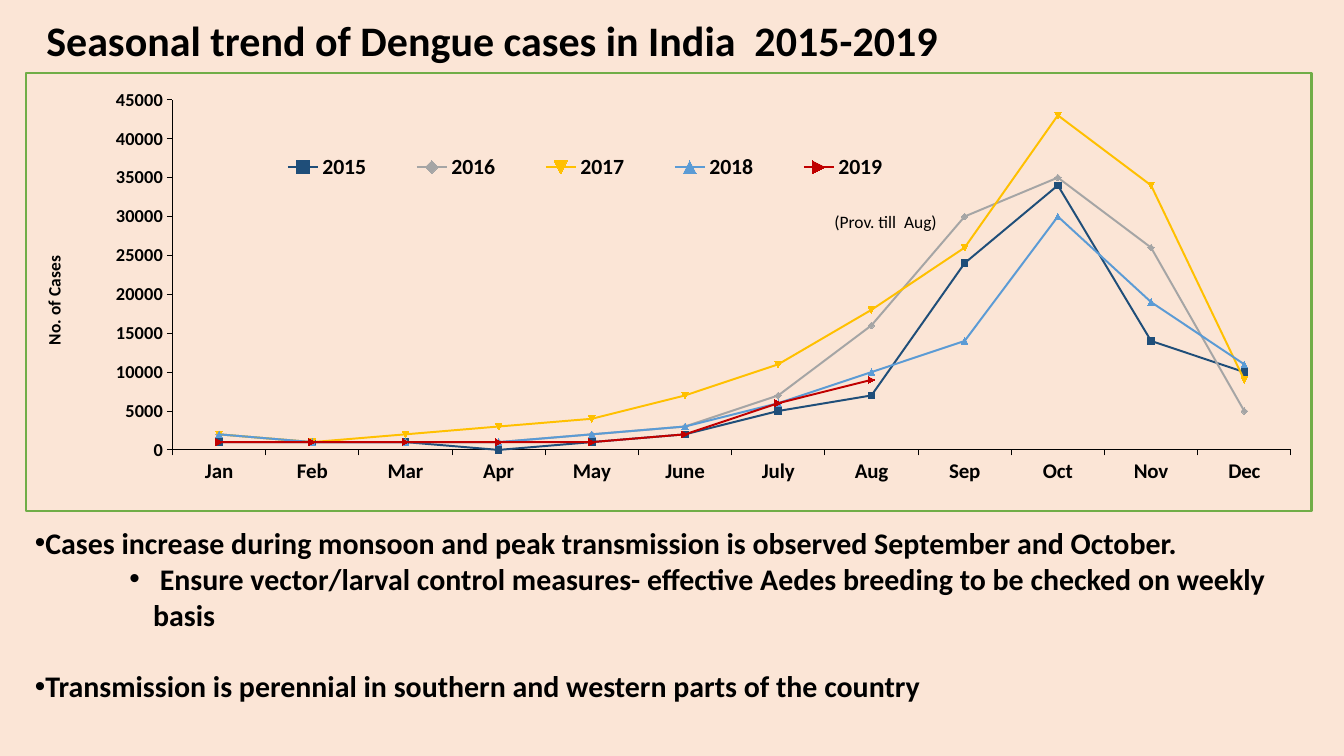
import dataclasses

import lxml.etree
import pptx
import pptx.chart.data
import pptx.dml.color
import pptx.enum.chart
import pptx.enum.text
import pptx.oxml
import pptx.oxml.ns
import pptx.util

qn = pptx.oxml.ns.qn
WIDTH, HEIGHT = 14.22, 8


@dataclasses.dataclass(frozen=True)
class Theme:
    font: str = "Calibri"
    ground: str = "FBE5D6"
    ink: str = "000000"
    border: str = "70AD47"
    title: float = 32
    body: float = 22.8
    note: float = 13.3
    axis_title: float = 13.3
    value_axis: float = 14
    month_axis: float = 16
    legend: float = 16.6


THEME = Theme()

MONTHS = ["Jan", "Feb", "Mar", "Apr", "May", "June",
          "July", "Aug", "Sep", "Oct", "Nov", "Dec"]
# Year: line colour, then cases in thousands by month
YEARS = {
    "2015": ("1F4E79", [1, 1, 1, 0, 1, 2, 5, 7, 24, 34, 14, 10]),
    "2016": ("A5A5A5", [2, 1, 1, 1, 2, 3, 7, 16, 30, 35, 26, 5]),
    "2017": ("FFC000", [2, 1, 2, 3, 4, 7, 11, 18, 26, 43, 34, 9]),
    "2018": ("5B9BD5", [2, 1, 1, 1, 2, 3, 6, 10, 14, 30, 19, 11]),
    "2019": ("C00000", [1, 1, 1, 1, 1, 2, 6, 9] + [None] * 4),
}
# Text, left margin and hanging indent in inches, space after in lines
POINTS = [
    ("Cases increase during monsoon and peak transmission is observed "
     "September and October.", 0, 0, 0),
    (" Ensure vector/larval control measures- effective Aedes breeding "
     "to be checked on weekly basis", 1.25, -0.25, 1.2),
    ("Transmission is perennial in southern and western parts of the country",
     0, 0, 0),
]


def color(code):
    return pptx.dml.color.RGBColor.from_string(code)


def style(font, size, bold=True):
    font.name, font.size, font.bold = THEME.font, pptx.util.Pt(size), bold
    font.color.rgb = color(THEME.ink)


def inches(box):
    return [pptx.util.Inches(length) for length in box]


def place(shape, box):
    shape.left, shape.top, shape.width, shape.height = inches(box)


def add_title(page, box):
    title = page.shapes.title
    place(title, box)
    frame = title.text_frame
    frame.text = "Seasonal trend of Dengue cases in India  2015-2019"
    frame.auto_size = pptx.enum.text.MSO_AUTO_SIZE.NONE
    frame.vertical_anchor = pptx.enum.text.MSO_ANCHOR.MIDDLE
    para = frame.paragraphs[0]
    para.alignment = pptx.enum.text.PP_ALIGN.LEFT
    para.line_spacing = 0.9
    style(para.font, THEME.title)


def add_points(page, box):
    body = page.placeholders[1]
    place(body, box)
    frame = body.text_frame
    frame.auto_size = pptx.enum.text.MSO_AUTO_SIZE.NONE
    frame.margin_left = frame.margin_right = pptx.util.Inches(0.11)
    frame.margin_top = frame.margin_bottom = pptx.util.Inches(0.06)
    frame.text = "\n".join(point[0] for point in POINTS)
    for para, (_, margin, indent, gap) in zip(frame.paragraphs, POINTS):
        para.level = 1 if margin else 0
        para.space_before = pptx.util.Pt(0)
        para.space_after = pptx.util.Pt(gap * THEME.body)
        style(para.font, THEME.body)
        # Bullet and hanging indent
        properties = para._p.get_or_add_pPr()
        properties.set("marL", str(pptx.util.Inches(margin)))
        properties.set("indent", str(pptx.util.Inches(indent)))
        bullet_font = lxml.etree.Element(qn("a:buFont"), typeface="Arial")
        bullet = lxml.etree.Element(qn("a:buChar"), char="•")
        spacing = properties.find(qn("a:spcAft"))
        spacing.addnext(bullet_font)
        bullet_font.addnext(bullet)


def set_layout(parent, index, inner=False, **shares):
    """Fix a chart part at shares of the chart's size."""
    for old in parent.findall(qn("c:layout")):
        parent.remove(old)
    layout = lxml.etree.Element(qn("c:layout"))
    manual = lxml.etree.SubElement(layout, qn("c:manualLayout"))
    settings = [("layoutTarget", "inner")] if inner else []
    settings += [("xMode", "edge"), ("yMode", "edge"), *shares.items()]
    for name, value in settings:
        lxml.etree.SubElement(manual, qn("c:" + name), val=str(value))
    parent.insert(index, layout)


def add_chart(page, box):
    data = pptx.chart.data.CategoryChartData(number_format="0")
    data.categories = MONTHS
    for year, (_, thousands) in YEARS.items():
        data.add_series(year, [None if n is None else n * 1000 for n in thousands])
    kind = pptx.enum.chart.XL_CHART_TYPE.LINE_MARKERS
    chart = page.shapes.add_chart(kind, *inches(box), data).chart
    style(chart.font, 10, bold=False)
    chart.has_title = False

    # Frame around the chart
    space = chart._chartSpace
    frame = pptx.oxml.parse_xml(
        f'<c:spPr {pptx.oxml.ns.nsdecls("c", "a")}><a:noFill/>'
        f'<a:ln w="{pptx.util.Pt(2)}"><a:solidFill><a:srgbClr val="{THEME.border}"/>'
        '</a:solidFill></a:ln></c:spPr>')
    space.find(qn("c:chart")).addnext(frame)

    # Yearly lines
    for series, (code, _) in zip(chart.plots[0].series, YEARS.values()):
        series.smooth = False
        series.format.line.color.rgb = color(code)
        series.format.line.width = pptx.util.Pt(1.5)
        series.marker.style = pptx.enum.chart.XL_MARKER_STYLE.AUTOMATIC
        series.marker.size = 5
        series.marker.format.fill.solid()
        series.marker.format.fill.fore_color.rgb = color(code)
        series.marker.format.line.color.rgb = color(code)

    # Axes
    months, cases = chart.category_axis, chart.value_axis
    for axis, size in ((months, THEME.month_axis), (cases, THEME.value_axis)):
        axis.has_major_gridlines = False
        axis.major_tick_mark = pptx.enum.chart.XL_TICK_MARK.OUTSIDE
        axis.format.line.color.rgb = color(THEME.ink)
        axis.format.line.width = pptx.util.Pt(0.75)
        style(axis.tick_labels.font, size)
    cases.minimum_scale, cases.maximum_scale, cases.major_unit = 0, 45000, 5000
    caption = cases.axis_title
    caption.text_frame.text = "No. of Cases"
    style(caption.text_frame.paragraphs[0].font, THEME.axis_title)
    set_layout(caption._element, 1, x=0.01, y=0.41)

    # Legend inside the plot
    chart.has_legend = True
    legend = chart.legend
    legend.position = pptx.enum.chart.XL_LEGEND_POSITION.BOTTOM
    legend.include_in_layout = False
    style(legend.font, THEME.legend)
    set_layout(legend._element, 1, x=0.17, y=0.17, w=0.53, h=0.09)
    plot_area = space.find(qn("c:chart")).find(qn("c:plotArea"))
    set_layout(plot_area, 0, inner=True, x=0.114, y=0.061, w=0.87, h=0.8)


def add_note(page, box):
    frame = page.shapes.add_textbox(*inches(box)).text_frame
    frame.word_wrap = False
    frame.text = "(Prov. till  Aug)"
    style(frame.paragraphs[0].font, THEME.note, bold=False)


def main():
    deck = pptx.Presentation()
    deck.slide_width, deck.slide_height = inches((WIDTH, HEIGHT))
    page = deck.slides.add_slide(deck.slide_layouts[1])
    page.background.fill.solid()
    page.background.fill.fore_color.rgb = color(THEME.ground)
    left = 0.26
    add_title(page, (0.39, 0.14, 0.95 * WIDTH, 0.62))
    add_points(page, (left, 5.49, WIDTH - 0.46, 2.03))
    add_chart(page, (left, 0.76, WIDTH - 0.59, 4.66))
    add_note(page, (8.73, 2.18, 1.3, 0.33))
    deck.save("out.pptx")


if __name__ == "__main__":
    main()
